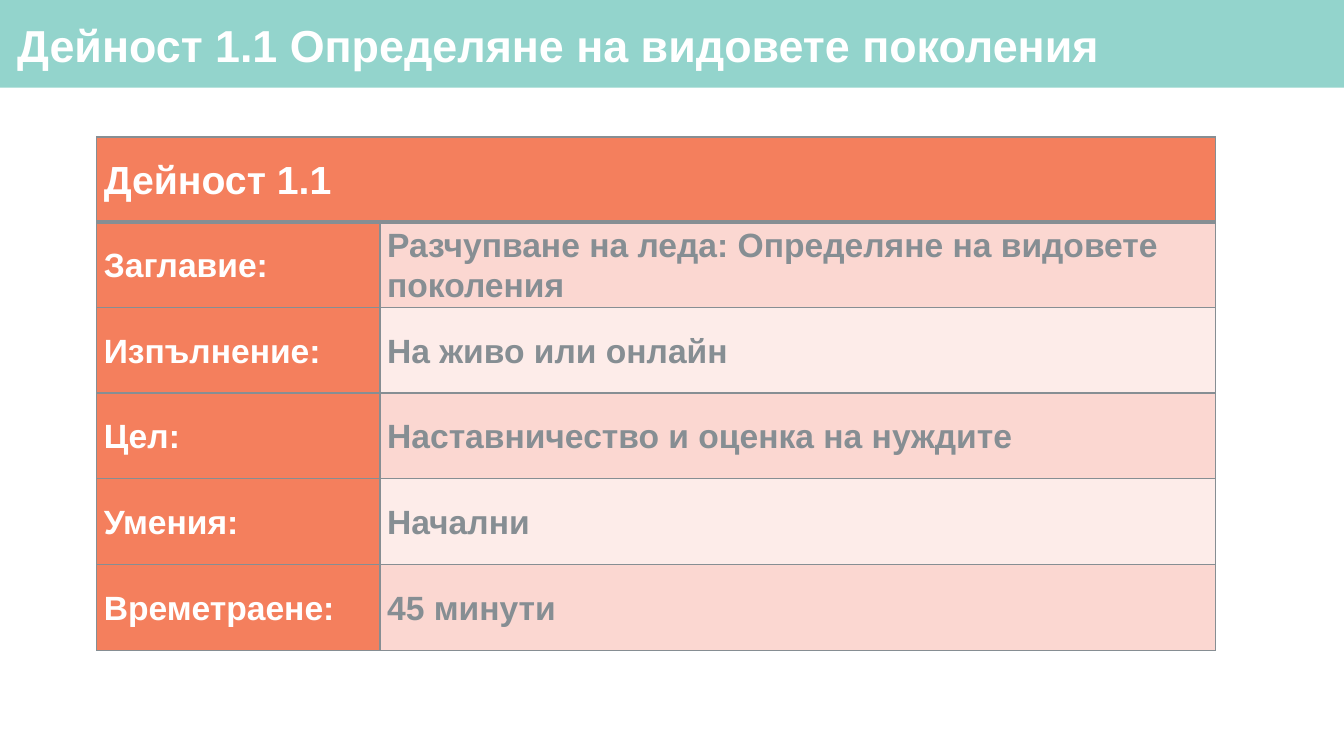
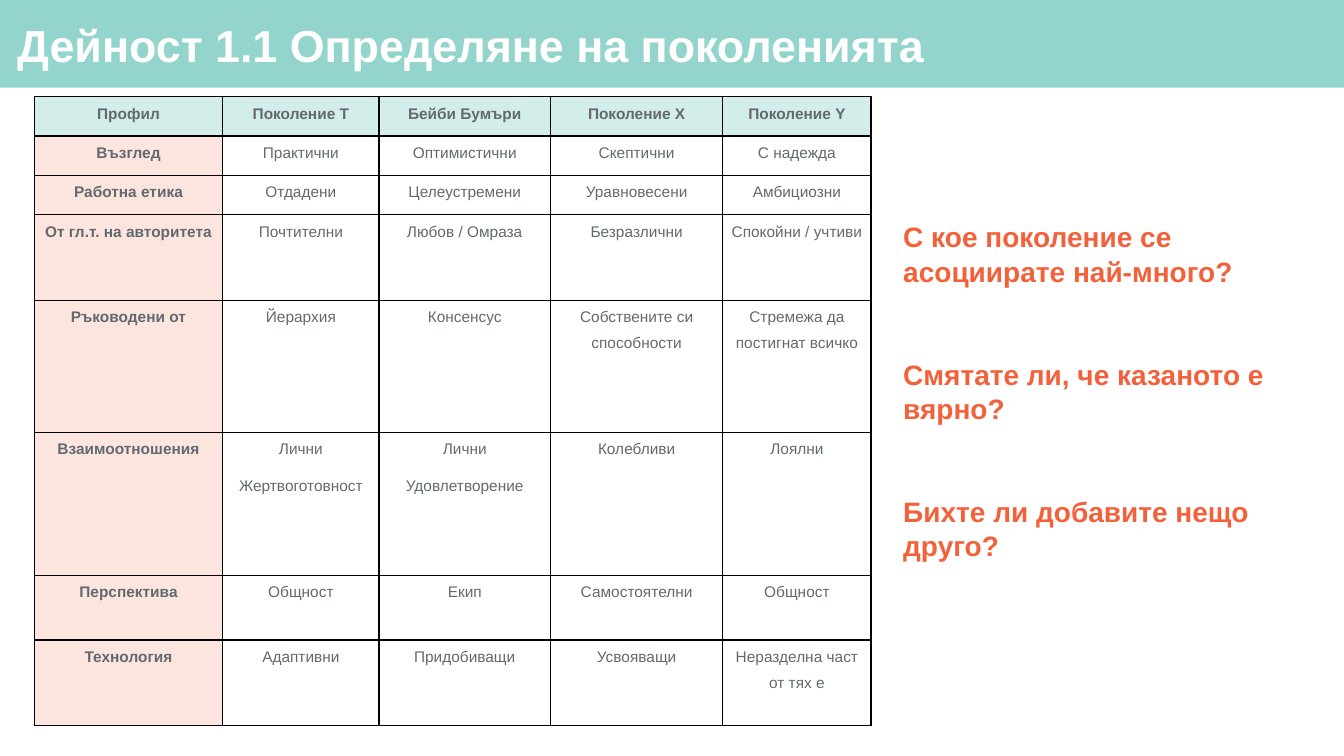
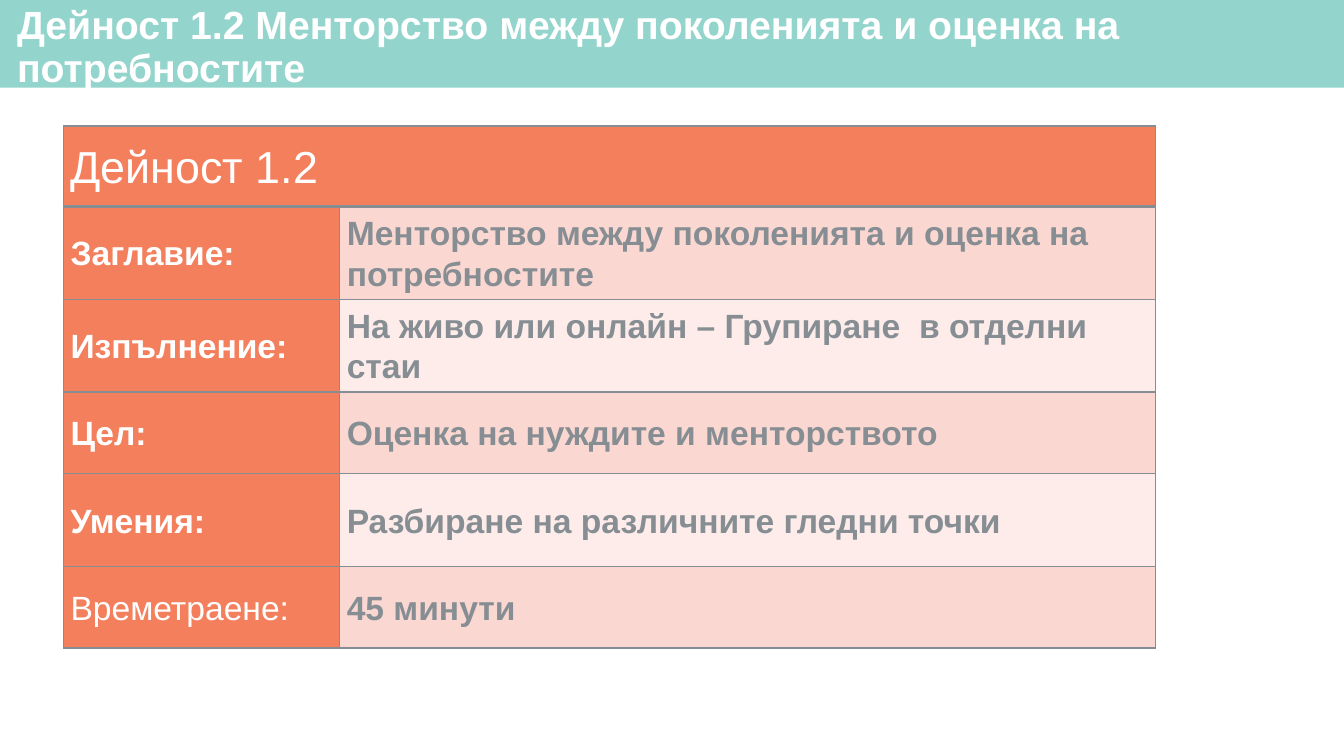
import lxml.etree
import pptx
import pptx.dml.color
import pptx.enum.shapes
import pptx.enum.text
import pptx.oxml.ns
import pptx.util

px = 9144
color = pptx.dml.color.RGBColor.from_string
qn = pptx.oxml.ns.qn
LEFT = pptx.enum.text.PP_ALIGN.LEFT
CENTER = pptx.enum.text.PP_ALIGN.CENTER
MIDDLE = pptx.enum.text.MSO_ANCHOR.MIDDLE
TOP = pptx.enum.text.MSO_ANCHOR.TOP

WHITE = "FFFFFF"
TEAL = "93D4CC"
PALE_TEAL = "D3EDEA"
CORAL = "F47F5D"
PALE_CORAL = "FCE5DE"
VALUE_FILLS = ["FDECE9", "FBD7D1"]
GRAY = "868E93"
DARK_GRAY = "636A6F"
ORANGE = "F2613A"
BLACK = "000000"


def write(frame, text, size, ink, bold=True, align=LEFT, spacing=1.0, gap=0):
    frame.text = text
    for number, paragraph in enumerate(frame.paragraphs):
        paragraph.alignment = align
        paragraph.line_spacing = spacing
        paragraph.space_before = pptx.util.Pt(gap if number else 0)
        for run in paragraph.runs:
            run.font.name = "Arial"
            run.font.size = pptx.util.Pt(size)
            run.font.bold = bold
            run.font.color.rgb = color(ink)


def add_grid(slide, left, top, widths, heights, margin, anchor, line, header_rule):
    frame = slide.shapes.add_table(len(heights), len(widths), left * px, top * px,
                                   sum(widths) * px, sum(heights) * px)
    grid = frame.table
    grid.first_row = grid.horz_banding = False
    for column, width in zip(grid.columns, widths):
        column.width = width * px
    for number, (row, height) in enumerate(zip(grid.rows, heights)):
        row.height = height * px
        for cell in row.cells:
            cell.margin_left = cell.margin_right = margin * px
            cell.margin_top = cell.margin_bottom = 0
            cell.vertical_anchor = anchor
            properties = cell._tc.get_or_add_tcPr()
            for place, side in enumerate("LRTB"):
                under_header = (number, side) in [(0, "B"), (1, "T")]
                weight = header_rule if under_header else 1
                border = lxml.etree.Element(qn("a:ln" + side), w=str(pptx.util.Pt(weight)))
                fill = lxml.etree.SubElement(border, qn("a:solidFill"))
                lxml.etree.SubElement(fill, qn("a:srgbClr"), val=line)
                properties.insert(place, border)
    return grid


deck = pptx.Presentation()
deck.slide_width = 1333 * px
deck.slide_height = 750 * px

layout = deck.slide_layouts[5]
heading = layout.placeholders[0]
heading.left, heading.top, heading.width, heading.height = 11 * px, 9 * px, 1306 * px, 78 * px
heading.text_frame.auto_size = pptx.enum.text.MSO_AUTO_SIZE.NONE
heading.text_frame.vertical_anchor = MIDDLE
heading.text_frame.margin_left = heading.text_frame.margin_right = 6 * px
heading.text_frame.margin_top = heading.text_frame.margin_bottom = 6 * px

titles = [
    ("Дейност 1.1 Определяне на видовете поколения", 32),
    ("Дейност 1.1 Определяне на поколенията", 32),
    ("Дейност 1.2 Менторство между поколенията и оценка на потребностите", 28),
]
slides = []
for title, size in titles:
    slide = deck.slides.add_slide(layout)
    write(slide.shapes.title.text_frame, title, size, WHITE, spacing=0.9)
    slides.append(slide)

band = slides[0].shapes.add_shape(pptx.enum.shapes.MSO_SHAPE.RECTANGLE, 0, 0, 1333 * px, 87 * px)
band.shadow.inherit = False
band.fill.solid()
band.fill.fore_color.rgb = color(TEAL)
band.line.fill.background()
layout.shapes.element.insert(2, band.element)

labels = ["Заглавие:", "Изпълнение:", "Цел:", "Умения:", "Времетраене:"]
activities = [
    (slides[0], 96, 136, [281, 829], [84, 85, 85, 85, 85, 85], "Дейност 1.1", 28, True,
     ["Разчупване на леда: Определяне на видовете поколения",
      "На живо или онлайн",
      "Наставничество и оценка на нуждите",
      "Начални",
      "45 минути"]),
    (slides[2], 63, 125, [274, 809], [80, 92, 92, 81, 92, 81], "Дейност 1.2", 32, False,
     ["Менторство между поколенията и оценка на потребностите",
      "На живо или онлайн – Групиране  в отделни стаи",
      "Оценка на нуждите и менторството",
      "Разбиране на различните гледни точки",
      "45 минути"]),
]
for slide, left, top, widths, heights, activity, size, bold, values in activities:
    card = add_grid(slide, left, top, widths, heights, 7, MIDDLE, GRAY, 3)
    header = card.cell(0, 0)
    header.merge(card.cell(0, 1))
    header.fill.solid()
    header.fill.fore_color.rgb = color(CORAL)
    write(header.text_frame, activity, size, WHITE, bold, spacing=1.07)
    for row, (label, value) in enumerate(zip(labels, values), 1):
        label_bold = bold or row < len(labels)
        for column, text, fill, ink, weight in [
            (0, label, CORAL, WHITE, label_bold),
            (1, value, VALUE_FILLS[row % 2], GRAY, True),
        ]:
            cell = card.cell(row, column)
            cell.fill.solid()
            cell.fill.fore_color.rgb = color(fill)
            write(cell.text_frame, text, 24, ink, weight, spacing=1.07)

profiles = [
    ["Профил", "Поколение Т", "Бейби Бумъри", "Поколение X", "Поколение Y"],
    ["Възглед", "Практични", "Оптимистични", "Скептични", "С надежда"],
    ["Работна етика", "Отдадени", "Целеустремени", "Уравновесени", "Амбициозни"],
    ["От гл.т. на авторитета", "Почтителни", "Любов / Омраза", "Безразлични", "Спокойни / учтиви"],
    ["Ръководени от", "Йерархия", "Консенсус", "Собствените си способности",
     "Стремежа да постигнат всичко"],
    ["Взаимоотношения", "Лични\nЖертвоготовност", "Лични\nУдовлетворение", "Колебливи", "Лоялни"],
    ["Перспектива", "Общност", "Екип", "Самостоятелни", "Общност"],
    ["Технология", "Адаптивни", "Придобиващи", "Усвояващи", "Неразделна част от тях е"],
]
generations = add_grid(slides[1], 34, 96, [187, 155, 170, 171, 147],
                       [39, 39, 39, 85, 131, 142, 64, 85], 6, TOP, BLACK, 1)
for row, profile in enumerate(profiles):
    for column, text in enumerate(profile):
        cell = generations.cell(row, column)
        is_label = row == 0 or column == 0
        if is_label:
            cell.fill.solid()
            cell.fill.fore_color.rgb = color(PALE_CORAL if row else PALE_TEAL)
        else:
            cell.fill.background()
        write(cell.text_frame, text, 11, DARK_GRAY, is_label, CENTER, 1.5, 8)

questions = [
    "С кое поколение се асоциирате най-много?",
    "Смятате ли, че казаното е вярно?",
    "Бихте ли добавите нещо друго?",
]
discussion = slides[1].shapes.add_textbox(886 * px, 212 * px, 431 * px, 279 * px)
discussion.text_frame.word_wrap = True
discussion.text_frame.auto_size = pptx.enum.text.MSO_AUTO_SIZE.SHAPE_TO_FIT_TEXT
write(discussion.text_frame, "\n".join(questions), 20, ORANGE, spacing=1.04, gap=48)

deck.save("out.pptx")
